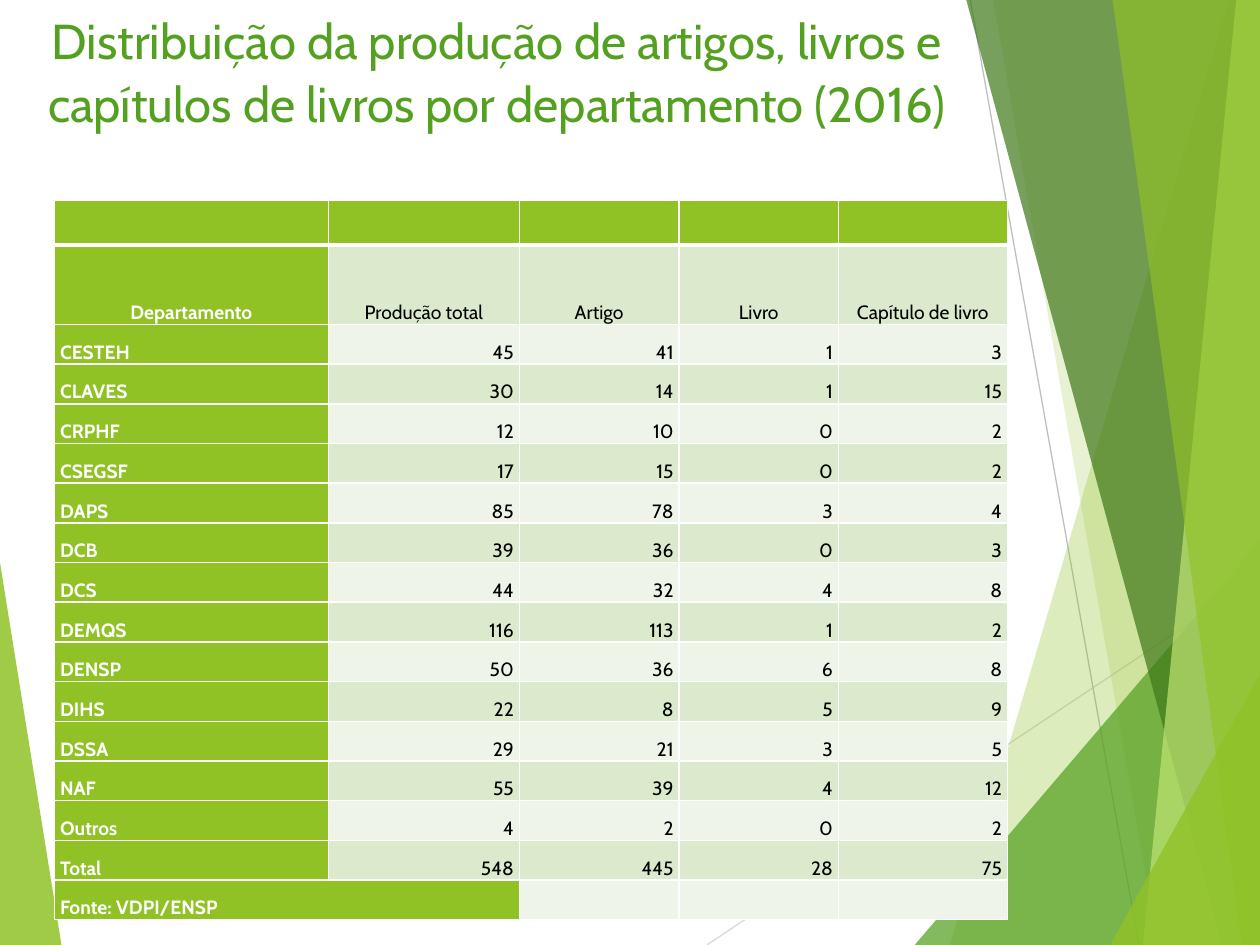
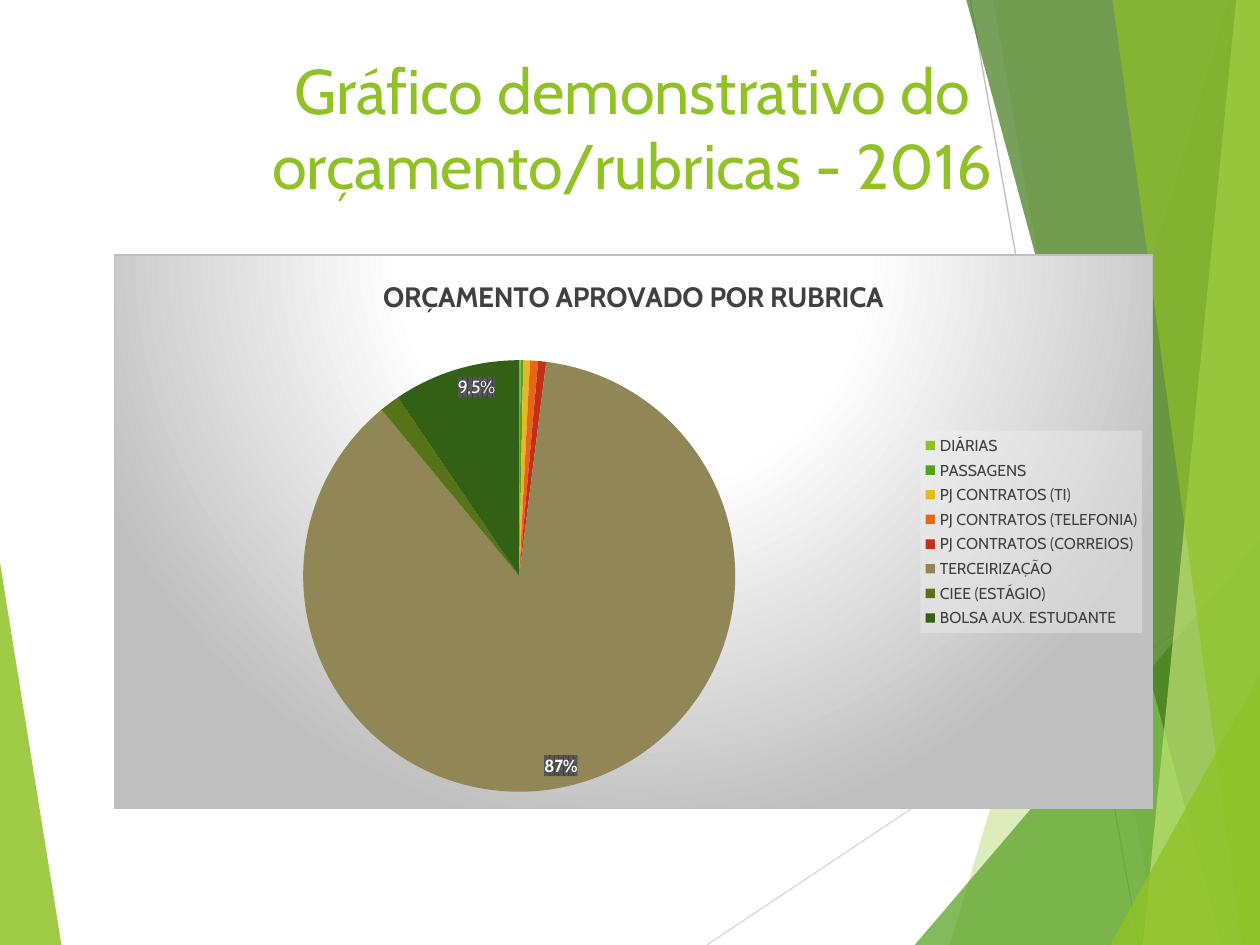
from lxml import etree
from pptx import Presentation, util as u
from pptx.chart.data import CategoryChartData
from pptx.dml.color import RGBColor
from pptx.enum import chart as ch, shapes, text
from pptx.oxml import parse_xml
from pptx.oxml.ns import nsdecls, qn

FONT = "Cabin"
WIDE, HIGH = 25.4, 19.05
HUES = {
    "lime": "90C226", "green": "54A021", "forest": "3F7819", "pale": "C0E474",
    "white": "FFFFFF", "black": "000000", "ink": "404040",
    "mist": "D9D9D9", "grey": "BFBFBF", "odd": "DBE9CD", "even": "EEF4E8",
}
SLICES = [
    ("DIÁRIAS", 0.1, "90C226"), ("PASSAGENS", 0.2, "54A021"),
    ("PJ CONTRATOS (TI)", 0.5, "E6B91E"), ("PJ CONTRATOS (TELEFONIA)", 0.6, "E76618"),
    ("PJ CONTRATOS (CORREIOS)", 0.6, "C42F1A"), ("TERCEIRIZAÇÃO", 87, "918655"),
    ("CIEE (ESTÁGIO)", 1.5, "567417"), ("BOLSA AUX. ESTUDANTE", 9.5, "326014"),
]
HEADS = ["Departamento", "Produção total", "Artigo", "Livro", "Capítulo de livro"]
DEPTS = [
    ("CESTEH", 45, 41, 1, 3), ("CLAVES", 30, 14, 1, 15), ("CRPHF", 12, 10, 0, 2),
    ("CSEGSF", 17, 15, 0, 2), ("DAPS", 85, 78, 3, 4), ("DCB", 39, 36, 0, 3),
    ("DCS", 44, 32, 4, 8), ("DEMQS", 116, 113, 1, 2), ("DENSP", 50, 36, 6, 8),
    ("DIHS", 22, 8, 5, 9), ("DSSA", 29, 21, 3, 5), ("NAF", 55, 39, 4, 12),
    ("Outros", 4, 2, 0, 2), ("Total", 548, 445, 28, 75),
]


def hue(name):
    return RGBColor.from_string(HUES.get(name, name))


def style(font, size, color, bold=False):
    font.name, font.size, font.bold = FONT, u.Pt(size), bold
    font.color.rgb = hue(color)


def add_run(para, words, size, color, bold=False):
    run = para.add_run()
    run.text = words
    style(run.font, size, color, bold)


# Backdrop
def band(top, foot):
    return [(top, 0), (foot, HIGH), (WIDE, HIGH), (WIDE, 0)]


def wedge(foot, side):
    return [(foot, HIGH), (WIDE, side), (WIDE, HIGH)]


def add_shard(slide, points, color, alpha):
    spots = [(u.Cm(x), u.Cm(y)) for x, y in points]
    pen = slide.shapes.build_freeform(*spots[0])
    pen.add_line_segments(spots[1:], close=True)
    shard = pen.convert_to_shape()
    shard.shadow.inherit = False
    shard.line.fill.background()
    shard.fill.solid()
    shard.fill.fore_color.rgb = hue(color)
    tint = next(shard.fill._xPr.iter(qn("a:srgbClr")))
    etree.SubElement(tint, qn("a:alpha")).set("val", str(alpha * 1000))


def add_line(slide, ends, color):
    line = slide.shapes.add_connector(
        shapes.MSO_CONNECTOR.STRAIGHT, *[u.Cm(n) for n in ends])
    line.line.color.rgb = hue(color)
    line.line.width = u.Pt(0.75)
    etree.SubElement(line._element.spPr, qn("a:effectLst"))


def add_back(slide):
    add_shard(slide, [(-0.03, 11.15), (1.24, HIGH), (-0.03, HIGH)], "lime", 85)
    add_line(slide, (14.25, HIGH, WIDE, 11.62), "mist")
    add_line(slide, (19.56, 0, 22.96, HIGH), "grey")
    for points, color, alpha in [
        (band(24.77, 19.15), "lime", 30), (band(20.02, 23.34), "lime", 20),
        (wedge(18.44, 10.9), "green", 72), (band(19.48, 24.64), "forest", 70),
        (band(24.92, 23.04), "pale", 70), (band(22.43, 25.04), "lime", 65),
        (wedge(22.38, 13.59), "lime", 80),
    ]:
        add_shard(slide, points, color, alpha)


def add_title(slide, box, words, size, color, gap=1.0):
    frame = slide.shapes.add_textbox(*[u.Cm(n) for n in box]).text_frame
    frame.word_wrap = True
    para = frame.paragraphs[0]
    para.alignment = text.PP_ALIGN.CENTER
    para.line_spacing = gap
    add_run(para, words, size, color)


# Table
def edge_cell(cell, top, foot):
    props = cell._tc.get_or_add_tcPr()
    for i, (side, wide) in enumerate(zip("LRTB", (1, 1, top, foot))):
        props.insert(i, parse_xml(
            f'<a:ln{side} {nsdecls("a")} w="{u.Pt(wide)}"><a:solidFill>'
            f'<a:srgbClr val="{HUES["white"]}"/></a:solidFill></a:ln{side}>'))


def fill_cell(cell, words, row, col):
    lead = col == 0
    cell.fill.solid()
    cell.fill.fore_color.rgb = hue(
        "lime" if lead or row == 0 else "odd" if row % 2 else "even")
    edge_cell(cell, 3 if row == 1 else 1, 3 if row == 0 else 1)
    cell.vertical_anchor = text.MSO_ANCHOR.BOTTOM
    cell.margin_left = cell.margin_right = u.Cm(0.11)
    cell.margin_top = cell.margin_bottom = 0
    para = cell.text_frame.paragraphs[0]
    if words == "":
        style(para.font, 11, "black")
        return
    align = text.PP_ALIGN
    para.alignment = align.CENTER if row == 1 else align.LEFT if lead else align.RIGHT
    para.line_spacing = 1.07
    add_run(para, str(words), 11, "white" if lead else "black", lead)


def add_grid(slide):
    blank = [""] * 4
    rows = [["", *blank], HEADS, *DEPTS, ["Fonte: VDPI/ENSP", *blank]]
    wides = [5.52, 3.85, 3.22, 3.21, 3.41]
    highs = [0.9, 1.6] + [0.8] * (len(rows) - 2)
    frame = slide.shapes.add_table(
        len(rows), len(wides), u.Cm(1.1), u.Cm(4.04),
        u.Cm(sum(wides)), u.Cm(sum(highs)))
    grid = frame.table
    for col, wide in zip(grid.columns, wides):
        col.width = u.Cm(wide)
    for row, high in zip(grid.rows, highs):
        row.height = u.Cm(high)
    for r, row in enumerate(rows):
        for c, words in enumerate(row):
            fill_cell(grid.cell(r, c), words, r, c)
    last = len(rows) - 1
    grid.cell(last, 0).merge(grid.cell(last, 1))


# Chart
def label_fill():
    return parse_xml(
        f'<c:spPr {nsdecls("c", "a")}><a:pattFill prst="pct75">'
        '<a:fgClr><a:srgbClr val="404040"/></a:fgClr>'
        '<a:bgClr><a:srgbClr val="595959"/></a:bgClr></a:pattFill></c:spPr>')


def add_labels(series):
    tags = series.data_labels
    tags.show_percentage, tags.show_value = True, False
    tags.number_format, tags.number_format_is_linked = "0%", False
    tags.position = ch.XL_LABEL_POSITION.INSIDE_END
    style(tags.font, 10, "white", True)
    tags._element.find(qn("c:numFmt")).addnext(label_fill())
    # Only the two large slices keep a label
    grant = series.points[7].data_label
    add_run(grant.text_frame.paragraphs[0], "9,5%", 10, "white")
    grant.position = ch.XL_LABEL_POSITION.INSIDE_END
    tags._element.find(qn("c:dLbl")).find(qn("c:tx")).addnext(label_fill())
    for i in (6, 4, 3, 2, 1, 0):
        tags._element.insert(0, parse_xml(
            f'<c:dLbl {nsdecls("c")}><c:idx val="{i}"/><c:delete val="1"/></c:dLbl>'))


def paint_chart(chart):
    root = chart._chartSpace
    root.find(qn("c:chart")).addnext(parse_xml(
        f'<c:spPr {nsdecls("c", "a")}><a:gradFill><a:gsLst>'
        + "".join(f'<a:gs pos="{pos}000"><a:srgbClr val="{HUES[tone]}"/></a:gs>'
                  for pos, tone in ((0, "white"), (39, "white"), (100, "grey")))
        + '</a:gsLst><a:path path="circle"><a:fillToRect l="50000" t="-80000" '
        'r="50000" b="180000"/></a:path></a:gradFill><a:ln w="9525"><a:solidFill>'
        f'<a:srgbClr val="{HUES["grey"]}"/></a:solidFill></a:ln></c:spPr>'))
    # Place of the pie within the frame
    area = root.find(".//" + qn("c:plotArea"))
    for old in area.findall(qn("c:layout")):
        area.remove(old)
    spots = (("x", 0.18), ("y", 0.19), ("w", 0.42), ("h", 0.78))
    area.insert(0, parse_xml(
        f'<c:layout {nsdecls("c")}><c:manualLayout><c:layoutTarget val="inner"/>'
        '<c:xMode val="edge"/><c:yMode val="edge"/>'
        + "".join(f'<c:{key} val="{val}"/>' for key, val in spots)
        + '</c:manualLayout></c:layout>'))
    # Translucent legend panel
    root.find(".//" + qn("c:legend")).find(qn("c:overlay")).addnext(parse_xml(
        f'<c:spPr {nsdecls("c", "a")}><a:solidFill><a:srgbClr val="F2F2F2">'
        '<a:alpha val="39000"/></a:srgbClr></a:solidFill></c:spPr>'))


def add_pie(slide):
    data = CategoryChartData()
    data.categories = [name for name, _, _ in SLICES]
    data.add_series("Series 1", [val for _, val, _ in SLICES])
    box = [u.Cm(n) for n in (2.29, 5.13, 20.96, 11.18)]
    chart = slide.shapes.add_chart(ch.XL_CHART_TYPE.PIE, *box, data).chart
    style(chart.font, 10, "black")
    chart.has_title = True
    add_run(chart.chart_title.text_frame.paragraphs[0],
            "ORÇAMENTO APROVADO POR RUBRICA", 16, "ink", True)
    chart.has_legend = True
    chart.legend.position = ch.XL_LEGEND_POSITION.RIGHT
    chart.legend.include_in_layout = False
    style(chart.legend.font, 9, "ink")
    plot = chart.plots[0]
    plot.vary_by_categories = True
    series = plot.series[0]
    for i, (_, _, color) in enumerate(SLICES):
        fill = series.points[i].format.fill
        fill.solid()
        fill.fore_color.rgb = hue(color)
    add_labels(series)
    paint_chart(chart)


def main():
    deck = Presentation()
    deck.slide_width, deck.slide_height = u.Cm(WIDE), u.Cm(HIGH)
    first, second = [deck.slides.add_slide(deck.slide_layouts[6]) for _ in range(2)]

    # Output by department
    add_back(first)
    add_grid(first)
    add_title(first, (0.3, 0, 19.41, 4.09),
              "Distribuição da produção de artigos, livros e "
              "capítulos de livros por departamento (2016)", 28, "green", 1.07)

    # Budget by item
    add_back(second)
    add_title(second, (2.69, 0.91, 20.12, 3.18),
              "Gráfico demonstrativo do orçamento/rubricas - 2016", 36, "lime")
    add_pie(second)
    deck.save("out.pptx")


if __name__ == "__main__":
    main()
